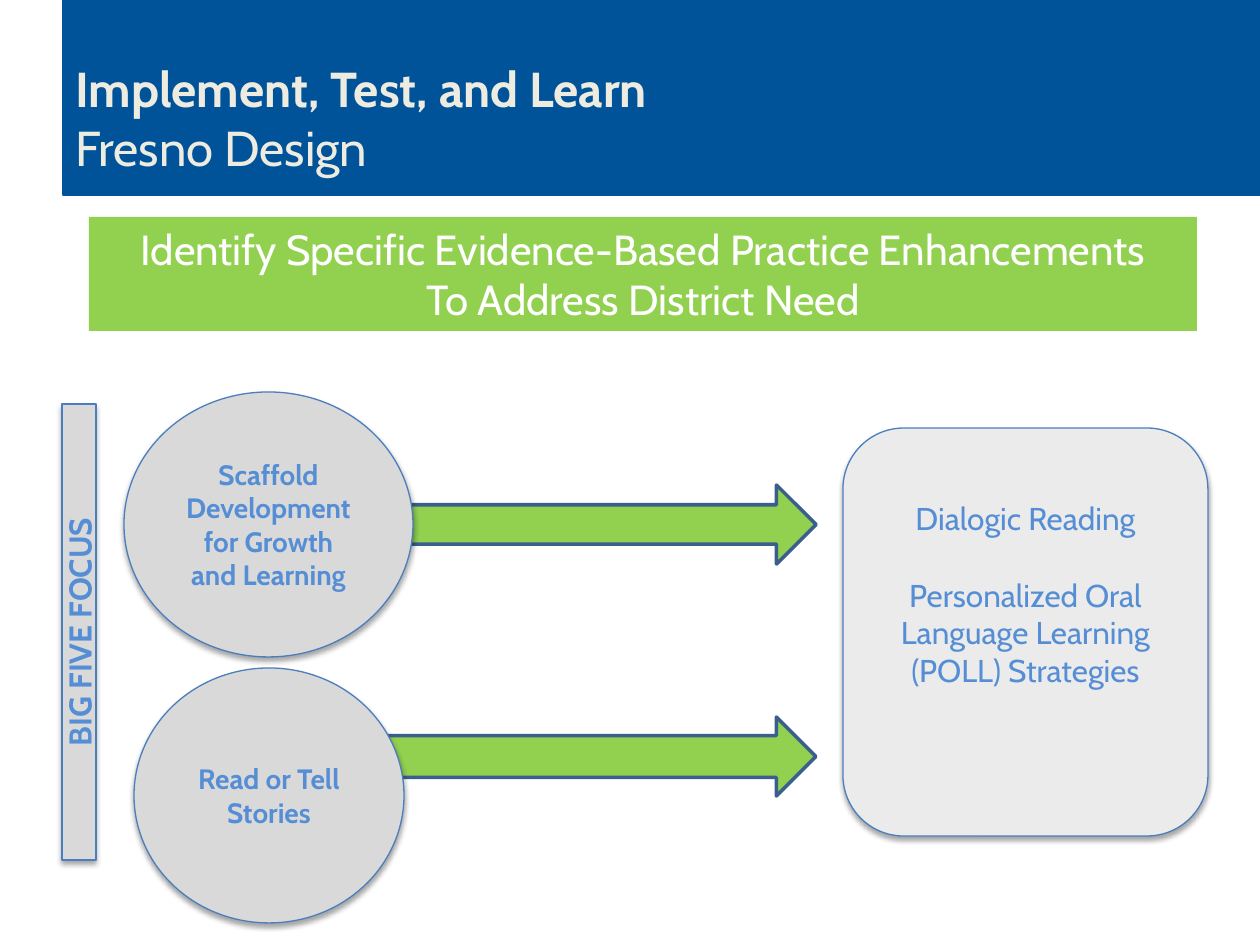
import pptx
import pptx.util
import pptx.dml.color
import pptx.enum.shapes
import pptx.enum.text
import pptx.oxml
import pptx.oxml.ns
from dataclasses import dataclass

PX_PER_INCH = 126
SHAPE = pptx.enum.shapes.MSO_SHAPE
ALIGN = pptx.enum.text.PP_ALIGN
ANCHOR = pptx.enum.text.MSO_ANCHOR


def px(n):
    return pptx.util.Emu(round(n * 914400 / PX_PER_INCH))


def rgb(color):
    return pptx.dml.color.RGBColor.from_string(color)


@dataclass
class Theme:
    font: str = "Cabin"
    navy: str = "005399"
    cream: str = "EEECE1"
    green: str = "92D050"
    white: str = "FFFFFF"
    arrow_line: str = "3A5F8C"
    gray: str = "D9D9D9"
    pale: str = "EBEBEB"
    edge: str = "4B7EBC"
    blue: str = "558ED5"
    title: int = 28
    heading: int = 24
    body: int = 18
    small: int = 16


class Builder:
    def __init__(self, slide, theme):
        self.s = slide
        self.t = theme

    def shape(self, kind, box, fill, line=None, width=0.75):
        sp = self.s.shapes.add_shape(kind, *map(px, box))
        sp.shadow.inherit = False
        sp.fill.solid()
        sp.fill.fore_color.rgb = rgb(fill)
        if line:
            sp.line.color.rgb = rgb(line)
            sp.line.width = pptx.util.Pt(width)
        else:
            sp.line.fill.background()
        return sp

    def set_text(self, sp, lines, size, color, bold=False, align=ALIGN.CENTER):
        tf = sp.text_frame
        tf.word_wrap = True
        tf.vertical_anchor = ANCHOR.MIDDLE
        tf.text = "\n".join(lines)
        for p in tf.paragraphs:
            p.alignment = align
            for r in p.runs:
                r.font.name = self.t.font
                r.font.size = pptx.util.Pt(size)
                r.font.bold = bold
                r.font.color.rgb = rgb(color)
        return tf

    def title(self, box, lines):
        sp = self.s.shapes.add_textbox(*map(px, box))
        tf = self.set_text(sp, lines, self.t.title, self.t.cream, align=ALIGN.LEFT)
        tf.paragraphs[0].runs[0].font.bold = True

    def heading(self, box, lines):
        sp = self.shape(SHAPE.RECTANGLE, box, self.t.green)
        tf = self.set_text(sp, lines, self.t.heading, self.t.white)
        tf.vertical_anchor = ANCHOR.TOP

    def arrow(self, box, shaft=0.5):
        sp = self.shape(SHAPE.RIGHT_ARROW, box, self.t.green, self.t.arrow_line, 2)
        sp.adjustments[0] = shaft

    def card(self, kind, box, lines, size, fill, bold=True):
        """Outlined shape with a soft shadow below it and blue text."""
        sp = self.shape(kind, box, fill, self.t.edge)
        effects = sp._element.spPr.find(pptx.oxml.ns.qn("a:effectLst"))
        effects.append(pptx.oxml.parse_xml(
            f'<a:outerShdw {pptx.oxml.ns.nsdecls("a")} blurRad="39370" dist="22860" '
            'dir="5400000" rotWithShape="0"><a:srgbClr val="000000">'
            '<a:alpha val="35000"/></a:srgbClr></a:outerShdw>'))
        return self.set_text(sp, lines, size, self.t.blue, bold)


def main():
    prs = pptx.Presentation()
    prs.slide_width, prs.slide_height = px(1260), px(945)
    t = Theme()
    b = Builder(prs.slides.add_slide(prs.slide_layouts[6]), t)

    # Title banner and green heading
    b.shape(SHAPE.RECTANGLE, (63, 0, 1197, 195), t.navy, t.navy)
    b.title((63, 38, 1134, 158), ["Implement, Test, and Learn", "Fresno Design"])
    b.heading((89, 217, 1108, 114),
              ["Identify Specific Evidence-Based Practice Enhancements",
               "To Address District Need"])

    # Arrows run from under the circles to the strategies panel
    b.arrow((383, 485, 433, 79))
    b.arrow((347, 717, 469, 79), shaft=0.53)

    # Focus circles
    b.card(SHAPE.OVAL, (124, 392, 289, 265),
           ["Scaffold Development for Growth and Learning"], t.small, t.gray)
    b.card(SHAPE.OVAL, (134, 668, 270, 255), ["Read or Tell Stories"], t.small, t.gray)

    # Strategies panel, its text raised by a deep bottom margin
    tf = b.card(SHAPE.ROUNDED_RECTANGLE, (843, 428, 365, 408),
                ["Dialogic Reading",
                 "Personalized Oral Language Learning (POLL) Strategies"],
                t.body, t.pale, bold=False)
    tf.margin_bottom = px(82)
    tf.paragraphs[1].space_before = pptx.util.Pt(22)

    # Vertical side label
    tf = b.card(SHAPE.RECTANGLE, (62, 404, 34, 456), ["BIG FIVE FOCUS"], t.body, t.gray)
    tf._txBody.bodyPr.set("vert", "vert270")

    prs.save("out.pptx")


if __name__ == "__main__":
    main()
